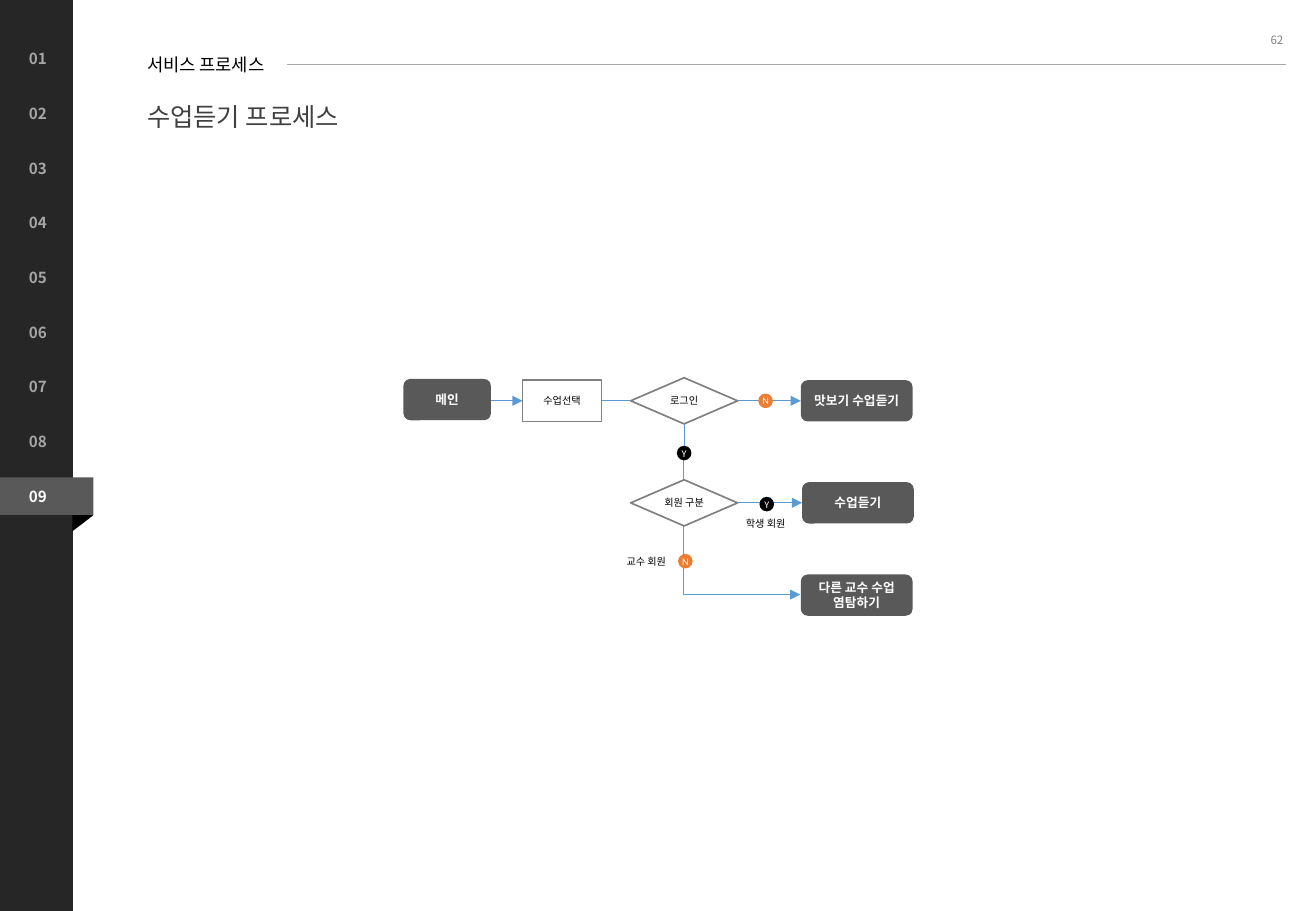
from dataclasses import dataclass

from lxml.etree import SubElement
from pptx import Presentation
from pptx.dml.color import RGBColor
from pptx.enum.shapes import MSO_CONNECTOR, MSO_SHAPE
from pptx.enum.text import MSO_ANCHOR, MSO_AUTO_SIZE, PP_ALIGN
from pptx.oxml.ns import qn
from pptx.util import Inches, Pt

COLORS = {
    "black": "000000", "white": "FFFFFF", "sidebar": "262626", "panel": "595959",
    "heading": "404040", "outline": "808080", "muted": "A6A6A6",
    "flow": "5B9BD5", "no": "ED7D31",
}
KOREAN = "Noto Sans CJK KR"
MIDDLE = {"vertical_anchor": MSO_ANCHOR.MIDDLE, "word_wrap": False}
TOP = {"vertical_anchor": MSO_ANCHOR.TOP, "word_wrap": True, "auto_size": MSO_AUTO_SIZE.NONE}
CENTER = {"alignment": PP_ALIGN.CENTER}
LEFT = {"alignment": PP_ALIGN.LEFT}


def margins(side: float, end: float) -> dict:
    """Return text frame margins for the sides and the ends."""
    return {"margin_left": Inches(side), "margin_right": Inches(side),
            "margin_top": Inches(end), "margin_bottom": Inches(end)}


@dataclass(frozen=True)
class TextStyle:
    """Format values of a text frame, its paragraphs and their font."""
    frame: dict
    paragraph: dict
    font: dict
    color: str


@dataclass(frozen=True)
class Node:
    """A shape, or a text box when it has no kind."""
    kind: MSO_SHAPE | None
    left: float
    top: float
    width: float
    height: float
    text: str = ""
    style: str = ""
    fill: str = ""
    line: str = ""
    rotation: float = 0


@dataclass(frozen=True)
class Link:
    """A connector, straight unless it has an elbow preset."""
    start: tuple[float, float]
    end: tuple[float, float]
    arrow: bool = True
    color: str = "flow"
    elbow: str = ""
    rotation: int = 0


def font(name: str, size: float, bold: bool = False) -> dict:
    """Return font values."""
    return {"name": name, "size": Pt(size), "bold": bold}


STYLES = {
    "menu": TextStyle(TOP, LEFT, font(KOREAN, 9, True), "muted"),
    "current": TextStyle(TOP, LEFT, font(KOREAN, 9, True), "white"),
    "page": TextStyle(MIDDLE | {"word_wrap": True}, {"alignment": PP_ALIGN.RIGHT},
                      font(KOREAN, 6.8), "outline"),
    "section": TextStyle(TOP | margins(0.07, 0.04), LEFT | {"line_spacing": 0.9},
                         font(KOREAN, 10.5), "black"),
    "title": TextStyle(TOP | margins(0, 0), LEFT | {"line_spacing": Pt(23.2)},
                       font(KOREAN, 15), "heading"),
    "screen": TextStyle(MIDDLE, CENTER, font("Arial", 7.5, True), "white"),
    "step": TextStyle(MIDDLE, CENTER, font("Arial", 6), "black"),
    "answer": TextStyle(MIDDLE | margins(0, 0), CENTER, font("Calibri", 6), "white"),
    "member": TextStyle(TOP | {"word_wrap": False}, LEFT, font("Calibri", 6), "black"),
    "member_right": TextStyle(TOP | {"word_wrap": False}, {"alignment": PP_ALIGN.RIGHT},
                              font("Calibri", 6), "black"),
}


def screen(left: float, top: float, width: float, text: str) -> Node:
    """Return a rounded screen node."""
    return Node(MSO_SHAPE.ROUNDED_RECTANGLE, left, top, width, 0.34, text, "screen", "panel")


def decision(top: float, text: str) -> Node:
    """Return a decision diamond."""
    return Node(MSO_SHAPE.DIAMOND, 5.19, top, 0.88, 0.38, text, "step", line="outline")


def answer(left: float, top: float, text: str) -> Node:
    """Return a yes or no marker."""
    fill = "no" if text == "N" else "black"
    return Node(MSO_SHAPE.OVAL, left, top, 0.12, 0.12, text, "answer", fill)


SIDEBAR = [
    Node(MSO_SHAPE.RECTANGLE, 0, -0.01, 0.6, 7.51, fill="sidebar"),
    Node(MSO_SHAPE.ISOSCELES_TRIANGLE, 0.55, 4.16, 0.26, 0.17, fill="black", rotation=90),
    Node(MSO_SHAPE.RECTANGLE, 0, 3.93, 0.77, 0.31, fill="panel"),
]
MENU = [
    Node(None, 0.14, 0.36 + 0.45 * index, 0.51, 0.25, f"{index + 1:02}",
         "current" if index == 8 else "menu")
    for index in range(9)
]
HEADER = [
    Node(None, 8.22, 0.13, 2.44, 0.4, "62", "page"),
    Node(None, 1.14, 0.42, 1.63, 0.24, "서비스 프로세스", "section"),
]
LINKS = [
    Link((2.36, 0.53), (10.58, 0.53), arrow=False, color="muted"),
    Link((6.39, 4.13), (5.82, 5.09), elbow="bentConnector2", rotation=270),
    Link((6.07, 4.14), (6.6, 4.14)),
    Link((4.03, 3.3), (4.3, 3.3)),
    Link((4.95, 3.3), (5.19, 3.3), arrow=False),
    Link((5.4, 3.72), (5.86, 3.73), arrow=False, elbow="bentConnector3", rotation=90),
    Link((6.07, 3.3), (6.59, 3.3)),
]
FLOW = [
    screen(3.32, 3.12, 0.72, "메인"),
    Node(MSO_SHAPE.RECTANGLE, 4.3, 3.13, 0.65, 0.34, "수업선택", "step", line="outline"),
    decision(3.11, "로그인"),
    decision(3.95, "회원 구분"),
    screen(6.59, 3.13, 0.92, "맛보기 수업듣기"),
    screen(6.6, 3.97, 0.92, "수업듣기"),
    screen(6.59, 4.73, 0.92, "다른 교수 수업\n염탐하기"),
    answer(6.24, 3.24, "N"),
    answer(5.57, 3.67, "Y"),
    answer(6.25, 4.09, "Y"),
    answer(5.58, 4.56, "N"),
    Node(None, 6.04, 4.21, 0.57, 0.2, "학생 회원", "member"),
    Node(None, 5.01, 4.52, 0.57, 0.2, "교수 회원", "member_right"),
]


def rgb(name: str) -> RGBColor:
    """Look up a named colour."""
    return RGBColor.from_string(COLORS[name])


def apply(target, values: dict) -> None:
    """Set each format value on the target."""
    for name, value in values.items():
        setattr(target, name, value)


def write(frame, text: str, style: TextStyle) -> None:
    """Fill a text frame and format it."""
    frame.text = text
    apply(frame, style.frame)
    for paragraph in frame.paragraphs:
        apply(paragraph, style.paragraph)
        for run in paragraph.runs:
            apply(run.font, style.font)
            run.font.color.rgb = rgb(style.color)
            SubElement(run._r.get_or_add_rPr(), qn("a:ea"), typeface=KOREAN)


def draw_node(slide, node: Node) -> None:
    """Draw a shape or a text box."""
    place = [Inches(value) for value in (node.left, node.top, node.width, node.height)]
    if node.kind is None:
        shape = slide.shapes.add_textbox(*place)
    else:
        shape = slide.shapes.add_shape(node.kind, *place)
        shape.shadow.inherit = False
        shape.rotation = node.rotation
        for part, color in ((shape.fill, node.fill), (shape.line.fill, node.line)):
            if color:
                part.solid()
                part.fore_color.rgb = rgb(color)
            else:
                part.background()
        if node.line:
            shape.line.width = Pt(1)
    if node.text:
        write(shape.text_frame, node.text, STYLES[node.style])


def draw_link(slide, link: Link) -> None:
    """Draw a connector."""
    kind = MSO_CONNECTOR.ELBOW if link.elbow else MSO_CONNECTOR.STRAIGHT
    ends = [Inches(value) for value in (*link.start, *link.end)]
    connector = slide.shapes.add_connector(kind, *ends)
    connector.line.color.rgb = rgb(link.color)
    connector.line.width = Pt(0.5)
    properties = connector._element.spPr
    if link.elbow:
        properties.find(qn("a:prstGeom")).set("prst", link.elbow)
        properties.find(qn("a:xfrm")).set("rot", str(link.rotation * 60000))
    if link.arrow:
        SubElement(properties.find(qn("a:ln")), qn("a:tailEnd"), type="triangle")
    SubElement(properties, qn("a:effectLst"))


def main() -> None:
    """Build the slide and save it."""
    deck = Presentation()
    apply(deck, {"slide_width": Inches(10.83), "slide_height": Inches(7.5)})
    slide = deck.slides.add_slide(deck.slide_layouts[5])
    title = slide.shapes.title
    apply(title, {"left": Inches(1.21), "top": Inches(0.76),
                  "width": Inches(1.67), "height": Inches(0.32)})
    write(title.text_frame, "수업듣기 프로세스", STYLES["title"])
    for node in SIDEBAR + MENU + HEADER:
        draw_node(slide, node)
    for link in LINKS:
        draw_link(slide, link)
    for node in FLOW:
        draw_node(slide, node)
    deck.save("out.pptx")


if __name__ == "__main__":
    main()
